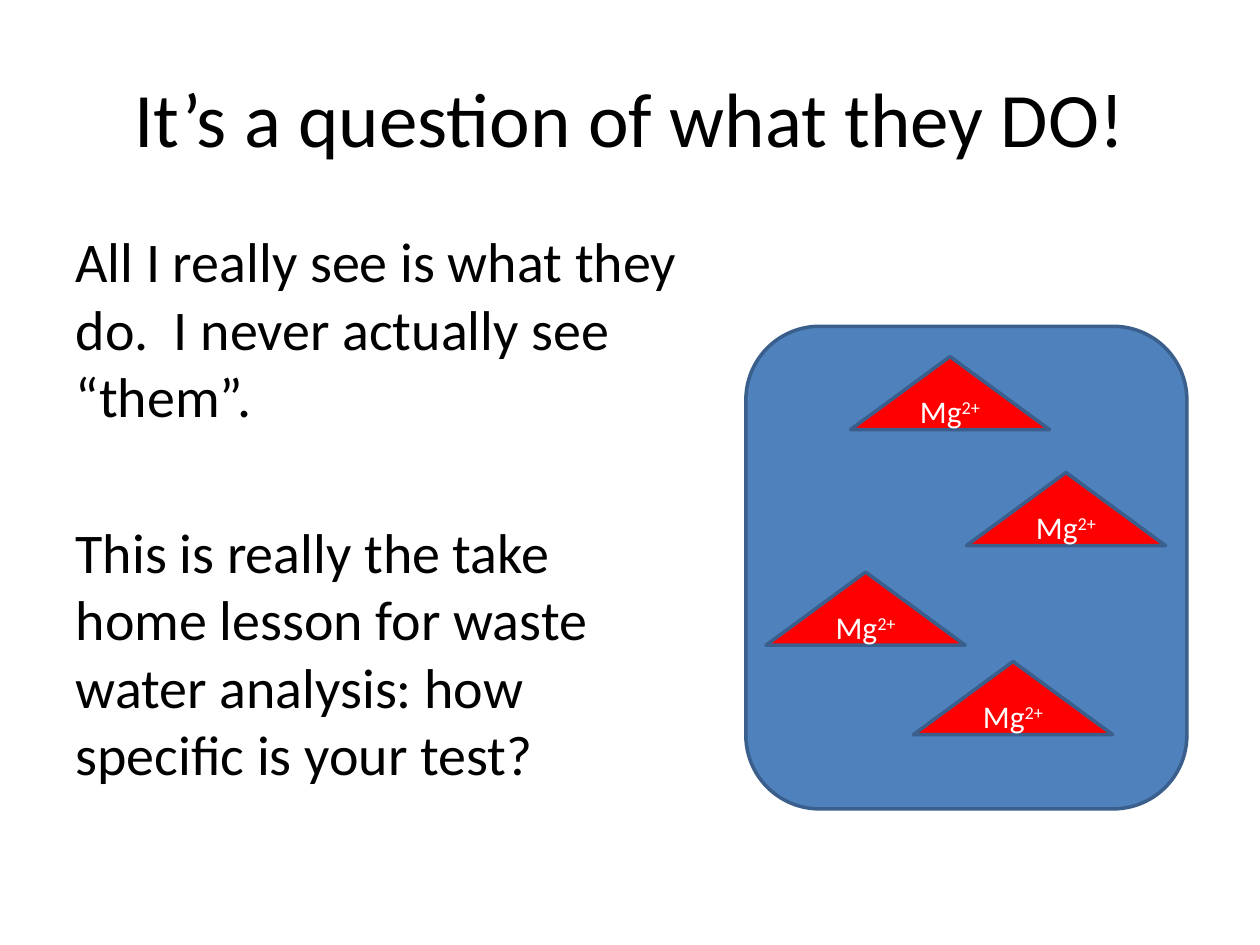
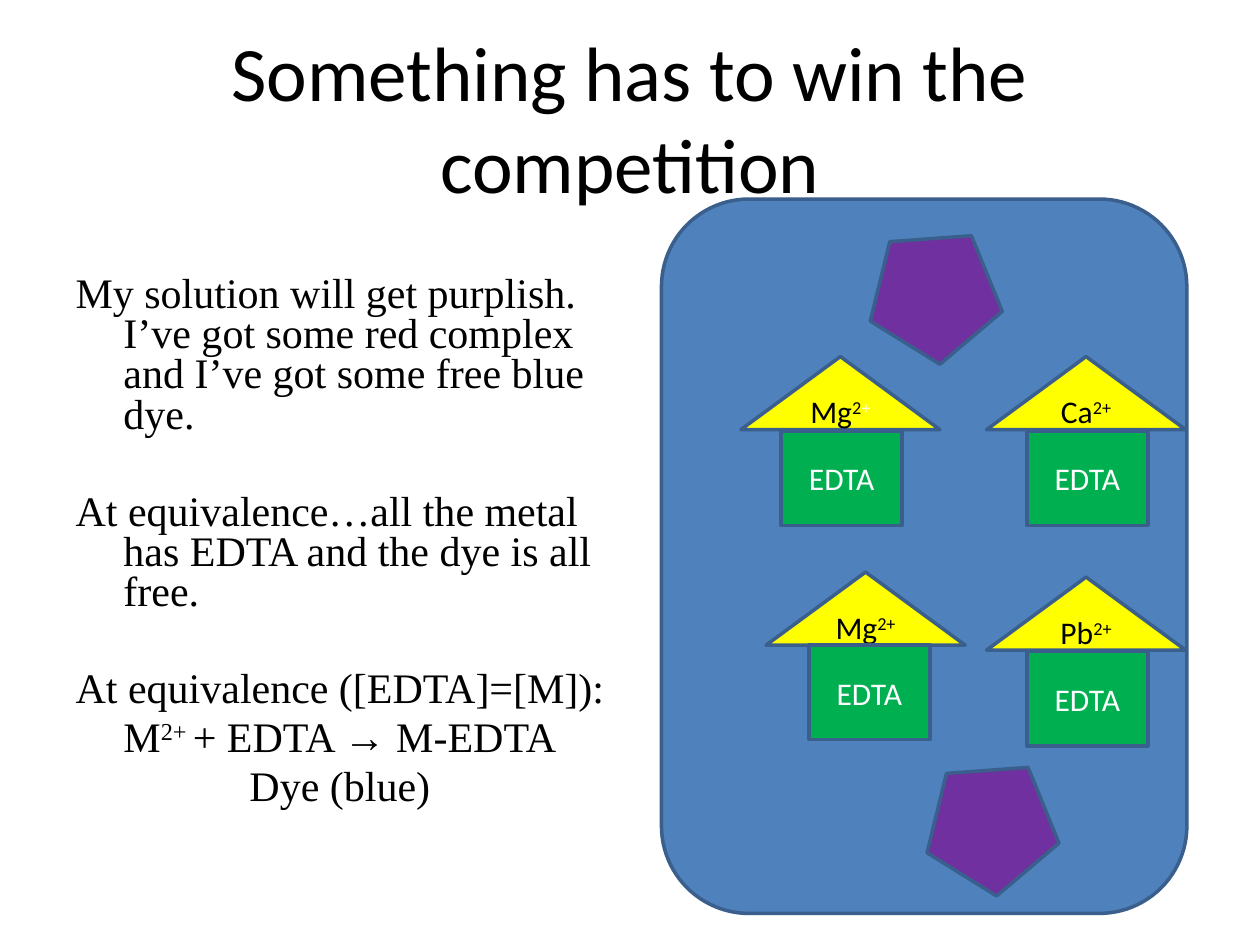
from lxml import etree
from pptx import Presentation
from pptx.dml.color import RGBColor
from pptx.enum.shapes import MSO_SHAPE
from pptx.enum.text import MSO_ANCHOR, MSO_AUTO_SIZE, PP_ALIGN
from pptx.oxml.ns import qn
from pptx.util import Inches, Pt

TANK = MSO_SHAPE.ROUNDED_RECTANGLE
ION = MSO_SHAPE.ISOSCELES_TRIANGLE
DYE = MSO_SHAPE.REGULAR_PENTAGON
LIGAND = MSO_SHAPE.RECTANGLE
CENTER, LEFT = PP_ALIGN.CENTER, PP_ALIGN.LEFT
MIDDLE = MSO_ANCHOR.MIDDLE
NO_FIT = MSO_AUTO_SIZE.NONE

COLORS = {
    "black": "000000",
    "white": "FFFFFF",
    "solution": "4F81BD",
    "outline": "3A5F8C",
    "red": "FF0000",
    "yellow": "FFFF00",
    "purple": "7030A0",
    "green": "00B050",
}
ION_SIZE = (1.58, 0.58)
DYE_SIZE = (1.05, 1)
LIGAND_SIZE = (0.96, 0.75)


def color(name):
    return RGBColor.from_string(COLORS[name])


class SlideBuilder:
    font = "Calibri"

    def __init__(self, deck):
        self.deck = deck
        self.page = None

    def place(self, box, left, top, width, height):
        box.left, box.top = Inches(left), Inches(top)
        box.width, box.height = Inches(width), Inches(height)

    def add_spans(self, para, text, size, ink, align, font=None):
        para.alignment = align
        for index, piece in enumerate(text.split("^")):
            if not piece:
                continue
            span = para.add_run()
            span.text = piece
            span.font.size = Pt(size)
            span.font.name = font or self.font
            span.font.color.rgb = color(ink)
            if index % 2:
                span._r.get_or_add_rPr().set("baseline", "30000")

    def start(self, title):
        self.page = self.deck.slides.add_slide(self.deck.slide_layouts[1])
        box = self.page.shapes.title
        self.place(box, 0.5, 0.3, 9, 1.25)
        frame = box.text_frame
        frame.auto_size = NO_FIT
        frame.vertical_anchor = MIDDLE
        self.add_spans(frame.paragraphs[0], title, 44, "black", CENTER)

    def body(self, width, items, size, font=None, line_spacing=None, margin_top=0.05):
        box = self.page.placeholders[1]
        self.place(box, 0.5, 1.75, width, 4.95)
        frame = box.text_frame
        frame.auto_size = NO_FIT
        frame.margin_top = Inches(margin_top)
        for index, (text, gap, left, indent) in enumerate(items):
            para = frame.add_paragraph() if index else frame.paragraphs[0]
            self.add_spans(para, text, size, "black", LEFT, font)
            para.space_before = Pt(gap)
            if line_spacing:
                para.line_spacing = line_spacing
            properties = para._p.get_or_add_pPr()
            properties.set("marL", str(Inches(left)))
            properties.set("indent", str(Inches(indent)))
            etree.SubElement(properties, qn("a:buNone"))

    def shape(self, kind, left, top, size, fill, text="", ink="white", rotation=0):
        box = self.page.shapes.add_shape(kind, 0, 0, 0, 0)
        self.place(box, left, top, *size)
        box.rotation = rotation
        box.shadow.inherit = False
        box.fill.solid()
        box.fill.fore_color.rgb = color(fill)
        box.line.color.rgb = color("outline")
        box.line.width = Pt(2)
        if text:
            box.text_frame.vertical_anchor = MIDDLE
            self.add_spans(box.text_frame.paragraphs[0], text, 18, ink, CENTER)
        return box


def build_question(builder):
    builder.start("It’s a question of what they DO!")
    builder.body(5.08, [
        ("All I really see is what they do.  I never actually see “them”.", 0, 0, 0),
        ("This is really the take home lesson for waste water analysis: "
         "how specific is your test?", 51, 0, 0),
    ], 32)
    builder.shape(TANK, 5.92, 2.59, (3.5, 3.83), "solution")
    for left, top in [(6.75, 2.83), (7.67, 3.75), (6.08, 4.54), (7.25, 5.25)]:
        builder.shape(ION, left, top, ION_SIZE, "red", "Mg^2+")


def build_competition(builder):
    builder.start("Something has to win the competition")
    builder.body(4.5, [
        ("My solution will get purplish.  I’ve got some red complex "
         "and I’ve got some free blue dye.", 0, 0.38, -0.38),
        ("At equivalence…all the metal has EDTA and the dye is all free.",
         32.4, 0.38, -0.38),
        ("At equivalence ([EDTA]=[M]):", 32.4, 0.38, -0.38),
        ("M^2+ ^+ EDTA → M-EDTA", 4.8, 0.38, 0),
        ("Dye (blue)", 4.8, 1.38, 0),
    ], 24, "Times New Roman", 0.8, 0.44)
    builder.shape(TANK, 5.25, 1.58, (4.17, 5.67), "solution")
    ions = [
        builder.shape(ION, left, top, ION_SIZE, "yellow", text, "black")
        for left, top, text in [
            (5.88, 2.83, "Mg^2^^+"),
            (7.83, 2.83, "Ca^2+"),
            (6.08, 4.54, "Mg^2+"),
            (7.83, 4.58, "Pb^2+"),
        ]
    ]
    plus_sign = ions[0].text_frame.paragraphs[0].runs[-1]
    plus_sign.font.color.rgb = color("white")
    for left, top in [(6.86, 1.8), (7.31, 6.02)]:
        builder.shape(DYE, left, top, DYE_SIZE, "purple", rotation=319.8)
    for left, top in [(6.2, 3.42), (8.15, 3.42), (6.42, 5.12), (8.15, 5.17)]:
        builder.shape(LIGAND, left, top, LIGAND_SIZE, "green", "EDTA")


def main():
    deck = Presentation()
    deck.slide_width, deck.slide_height = Inches(10), Inches(7.5)
    builder = SlideBuilder(deck)
    build_question(builder)
    build_competition(builder)
    deck.save("out.pptx")


if __name__ == "__main__":
    main()
